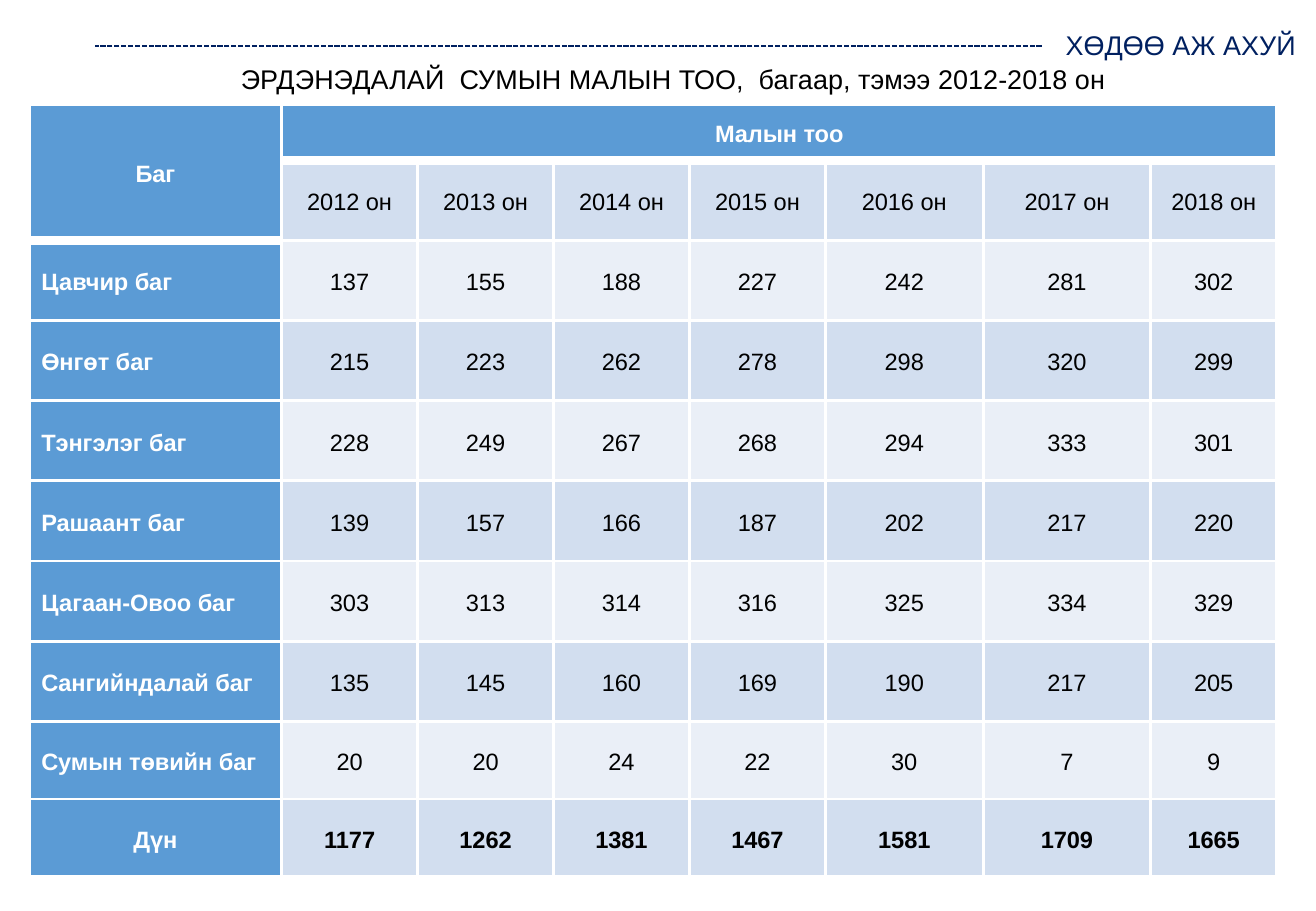
from lxml import etree
from pptx import Presentation
from pptx.dml.color import RGBColor
from pptx.enum.dml import MSO_LINE
from pptx.enum.shapes import MSO_CONNECTOR
from pptx.enum.text import MSO_ANCHOR, MSO_AUTO_SIZE, PP_ALIGN
from pptx.oxml.ns import qn
from pptx.util import Inches, Pt

CENTER, LEFT = PP_ALIGN.CENTER, PP_ALIGN.LEFT
MIDDLE = MSO_ANCHOR.MIDDLE
GROW = MSO_AUTO_SIZE.SHAPE_TO_FIT_TEXT
STRAIGHT = MSO_CONNECTOR.STRAIGHT
SHORT_DASH = MSO_LINE.SQUARE_DOT
LEFT_SIDE = 1

NAVY, BLACK, WHITE = "002060", "000000", "FFFFFF"
HEADER_BLUE, BAND_DARK, BAND_LIGHT = "5B9BD5", "D2DEEF", "EAEFF7"

YEARS = [f"{year} он" for year in range(2012, 2019)]
HERDS = [
    ("Цавчир баг", [137, 155, 188, 227, 242, 281, 302]),
    ("Өнгөт баг", [215, 223, 262, 278, 298, 320, 299]),
    ("Тэнгэлэг баг", [228, 249, 267, 268, 294, 333, 301]),
    ("Рашаант баг", [139, 157, 166, 187, 202, 217, 220]),
    ("Цагаан-Овоо баг", [303, 313, 314, 316, 325, 334, 329]),
    ("Сангийндалай баг", [135, 145, 160, 169, 190, 217, 205]),
    ("Сумын төвийн баг", [20, 20, 24, 22, 30, 7, 9]),
    ("Дүн", [1177, 1262, 1381, 1467, 1581, 1709, 1665]),
]
COLUMN_WIDTHS = [1.04] + [0.56] * 4 + [0.65, 0.69, 0.52]
ROW_HEIGHTS = [0.23] + [0.33] * 7 + [0.32] * 2


def color(hex_string):
    """Turn a hex string into a colour."""
    return RGBColor.from_string(hex_string)


class HerdSlide:
    """Draw slide elements in one shared style."""

    def __init__(self, slide, font="Arial"):
        """Keep the slide and its font."""
        self.slide = slide
        self.font = font

    def add_words(self, frame, text, size, ink, align, bold=False):
        """Put one run into the first paragraph and return the paragraph."""
        paragraph = frame.paragraphs[0]
        paragraph.alignment = align
        run = paragraph.add_run()
        run.text = text
        run.font.name = self.font
        run.font.size = Pt(size)
        run.font.bold = bold
        run.font.color.rgb = color(ink)
        return paragraph

    def label(self, left, top, width, height, text, ink, align):
        """Add a line of heading text."""
        box = self.slide.shapes.add_textbox(
            Inches(left), Inches(top), Inches(width), Inches(height))
        box.text_frame.word_wrap = True
        box.text_frame.auto_size = GROW
        self.add_words(box.text_frame, text, 8, ink, align)
        return box

    def dashed_rule(self, start, end_x, y, section):
        """Add a dashed line that starts at the section label."""
        rule = self.slide.shapes.add_connector(
            STRAIGHT, Inches(start), Inches(y), Inches(end_x), Inches(y))
        rule.begin_connect(section, LEFT_SIDE)
        rule.line.color.rgb = color(NAVY)
        rule.line.width = Pt(0.5)
        rule.line.dash_style = SHORT_DASH
        etree.SubElement(rule._element.spPr, qn("a:effectLst"))

    def table(self, left, top, widths, heights):
        """Add a table with the given column widths and row heights."""
        grid = self.slide.shapes.add_table(
            len(heights), len(widths), Inches(left), Inches(top),
            Inches(sum(widths)), Inches(sum(heights))).table
        grid.first_row = grid.horz_banding = False
        for column, width in zip(grid.columns, widths):
            column.width = Inches(width)
        for row, height in zip(grid.rows, heights):
            row.height = Inches(height)
        return grid

    def cell_style(self, cell, fill, top=1, bottom=1):
        """Set the margins, white borders and fill of a cell."""
        cell.margin_left = cell.margin_right = Inches(0.05)
        cell.margin_top = cell.margin_bottom = 0
        cell.vertical_anchor = MIDDLE
        properties = cell._tc.get_or_add_tcPr()
        for side, points in zip("LRTB", (1, 1, top, bottom)):
            edge = etree.SubElement(properties, qn(f"a:ln{side}"), w=str(Pt(points)))
            paint = etree.SubElement(edge, qn("a:solidFill"))
            etree.SubElement(paint, qn("a:srgbClr"), val=WHITE)
        cell.fill.solid()
        cell.fill.fore_color.rgb = color(fill)

    def cell_text(self, cell, text, ink, align, bold):
        """Put text into a cell."""
        self.add_words(cell.text_frame, text, 7, ink, align, bold).line_spacing = 1.15

    def herd_table(self, left, top):
        """Add the table of herd counts by district and year."""
        grid = self.table(left, top, COLUMN_WIDTHS, ROW_HEIGHTS)
        grid.cell(0, 0).merge(grid.cell(1, 0))
        grid.cell(0, 1).merge(grid.cell(0, len(YEARS)))
        rows = [("Баг", ["Малын тоо"]), ("", YEARS)] + HERDS
        last = len(rows) - 1
        for r, (name, values) in enumerate(rows):
            band = BAND_DARK if r % 2 or r == last else BAND_LIGHT
            for c in range(len(COLUMN_WIDTHS)):
                header = r == 0 or c == 0
                header_end = 1 if c == 0 else 0
                self.cell_style(
                    grid.cell(r, c), HEADER_BLUE if header else band,
                    top=3 if r == header_end + 1 else 1,
                    bottom=3 if r in (0, header_end) else 1)
            for c, text in enumerate([name, *values]):
                if text == "":
                    continue
                header = r == 0 or c == 0
                district = c == 0 and 1 < r < last
                self.cell_text(
                    grid.cell(r, c), str(text), WHITE if header else BLACK,
                    LEFT if district else CENTER, header or r == last)


def main():
    """Build and save the slide."""
    deck = Presentation()
    deck.slide_width, deck.slide_height = Inches(5.42), Inches(3.75)
    page = HerdSlide(deck.slides.add_slide(deck.slide_layouts[6]))
    page.label(0.45, 0.21, 4.65, 0.24,
               "ЭРДЭНЭДАЛАЙ  СУМЫН МАЛЫН ТОО,  багаар, тэмээ 2012-2018 он",
               BLACK, CENTER)
    page.herd_table(0.12, 0.43)
    section = page.label(4.29, 0.07, 1.22, 0.24, "ХӨДӨӨ АЖ АХУЙ", NAVY, LEFT)
    page.dashed_rule(4.29, 0.39, 0.19, section)
    deck.save("out.pptx")


if __name__ == "__main__":
    main()
